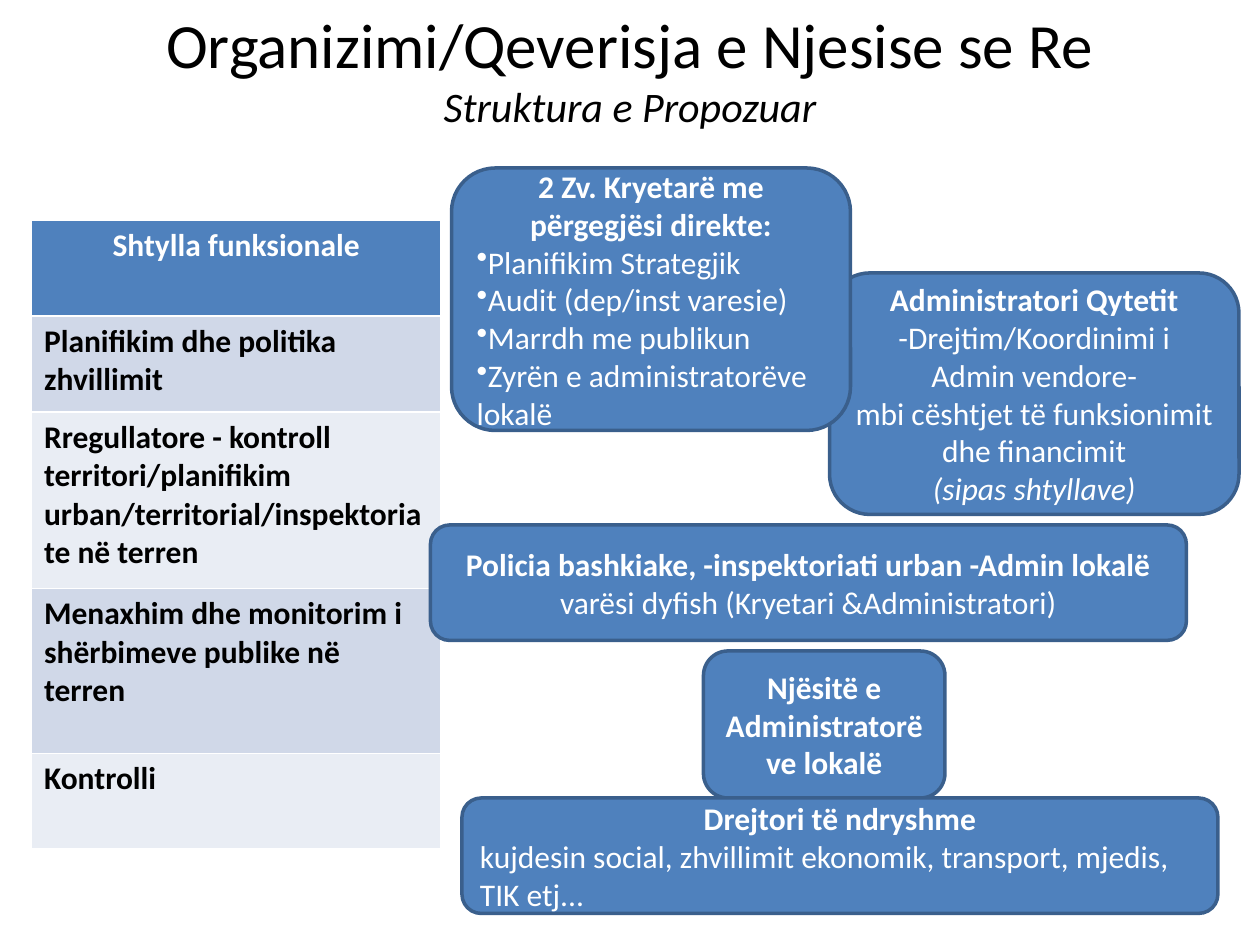
from lxml.etree import SubElement
from pptx import Presentation
from pptx.dml.color import RGBColor
from pptx.enum.shapes import MSO_SHAPE
from pptx.enum.text import MSO_ANCHOR, PP_ALIGN
from pptx.oxml.ns import qn
from pptx.util import Inches, Pt

WHITE = RGBColor(0xFF, 0xFF, 0xFF)
BLACK = RGBColor(0, 0, 0)
BLUE = RGBColor(0x4F, 0x81, 0xBD)
EDGE = RGBColor(0x3A, 0x5F, 0x8C)
BANDS = (RGBColor(0xE9, 0xED, 0xF4), RGBColor(0xD0, 0xD8, 0xE8))

WIDE, HIGH = Inches(10), Inches(7.5)
COLS, ROWS = 120, 90

BASE = {"name": "Calibri", "size": Pt(18), "bold": False, "italic": False}
BOLD = BASE | {"bold": True}
SLANT = BASE | {"italic": True}
HEAD = BASE | {"size": Pt(36)}
SUB = SLANT | {"size": Pt(24)}

MID, LEFT = PP_ALIGN.CENTER, PP_ALIGN.LEFT

PILLARS = [
    ("Shtylla funksionale", 0.76),
    ("Planifikim dhe politika zhvillimit", 0.76),
    ("Rregullatore - kontroll territori/planifikim "
     "urban/territorial/inspektoriate në terren", 1.4),
    ("Menaxhim dhe monitorim i shërbimeve publike në terren", 1.31),
    ("Kontrolli", 0.76),
]

BOXES = [
    ((79, 26, 39, 23), [
        ("Administratori Qytetit", BOLD, MID, False),
        ("-Drejtim/Koordinimi i Admin vendore-", BASE, MID, False),
        ("mbi cështjet të funksionimit dhe financimit", BASE, MID, False),
        ("(sipas shtyllave)", SLANT, MID, False)]),
    ((43, 16, 38, 25), [
        ("2 Zv. Kryetarë me përgegjësi direkte:", BOLD, MID, False),
        ("Planifikim Strategjik", BASE, LEFT, True),
        ("Audit (dep/inst varesie)", BASE, LEFT, True),
        ("Marrdh me publikun", BASE, LEFT, True),
        ("Zyrën e administratorëve lokalë", BASE, LEFT, True)]),
    ((41, 50, 72, 11), [
        ("Policia bashkiake, -inspektoriati urban -Admin lokalë",
         BOLD, MID, False),
        ("varësi dyfish (Kryetari &Administratori)", BASE, MID, False)]),
    ((67, 62, 23, 14), [
        ("Njësitë e Administratorëve lokalë", BOLD, MID, False)]),
    ((44, 76, 72, 11), [
        ("Drejtori të ndryshme", BOLD, MID, False),
        ("kujdesin social, zhvillimit ekonomik, transport, mjedis, "
         "TIK etj...", BASE, LEFT, False)]),
]


def place(col, row, wide, high):
    return (WIDE * col // COLS, HIGH * row // ROWS,
            WIDE * wide // COLS, HIGH * high // ROWS)


def add_run(para, text, form, color):
    run = para.add_run()
    run.text = text
    for key, value in form.items():
        setattr(run.font, key, value)
    run.font.color.rgb = color


def add_title(slide):
    title = slide.shapes.title
    title.left, title.top, title.width, title.height = place(6, 0, 108, 13)
    frame = title.text_frame
    frame.vertical_anchor = MSO_ANCHOR.MIDDLE
    para = frame.paragraphs[0]
    para.alignment = MID
    add_run(para, "Organizimi/Qeverisja e Njesise se Re", HEAD, BLACK)
    para.add_line_break()
    add_run(para, "Struktura e Propozuar", SUB, BLACK)


def add_pillars(slide):
    table = slide.shapes.add_table(
        len(PILLARS), 1, *place(3, 21, 39, 60)).table
    for index, (text, high) in enumerate(PILLARS):
        table.rows[index].height = Inches(high)
        cell = table.cell(index, 0)
        cell.fill.solid()
        cell.fill.fore_color.rgb = BANDS[index % 2] if index else BLUE
        para = cell.text_frame.paragraphs[0]
        para.alignment = LEFT if index else MID
        add_run(para, text, BOLD, BLACK if index else WHITE)


def add_box(slide, spot, lines):
    box = slide.shapes.add_shape(MSO_SHAPE.ROUNDED_RECTANGLE, *place(*spot))
    box.shadow.inherit = False
    box.fill.solid()
    box.fill.fore_color.rgb = BLUE
    box.line.color.rgb = EDGE
    box.line.width = Pt(2)
    frame = box.text_frame
    frame.word_wrap = True
    frame.vertical_anchor = MSO_ANCHOR.MIDDLE
    for index, (text, form, align, dot) in enumerate(lines):
        para = frame.add_paragraph() if index else frame.paragraphs[0]
        para.alignment = align
        if dot:
            props = para._p.get_or_add_pPr()
            SubElement(props, qn("a:buChar")).set("char", "•")
        add_run(para, text, form, WHITE)


def main():
    deck = Presentation()
    deck.slide_width, deck.slide_height = WIDE, HIGH
    slide = deck.slides.add_slide(deck.slide_layouts[5])
    add_title(slide)
    add_pillars(slide)
    for spot, lines in BOXES:
        add_box(slide, spot, lines)
    deck.save("out.pptx")


if __name__ == "__main__":
    main()
